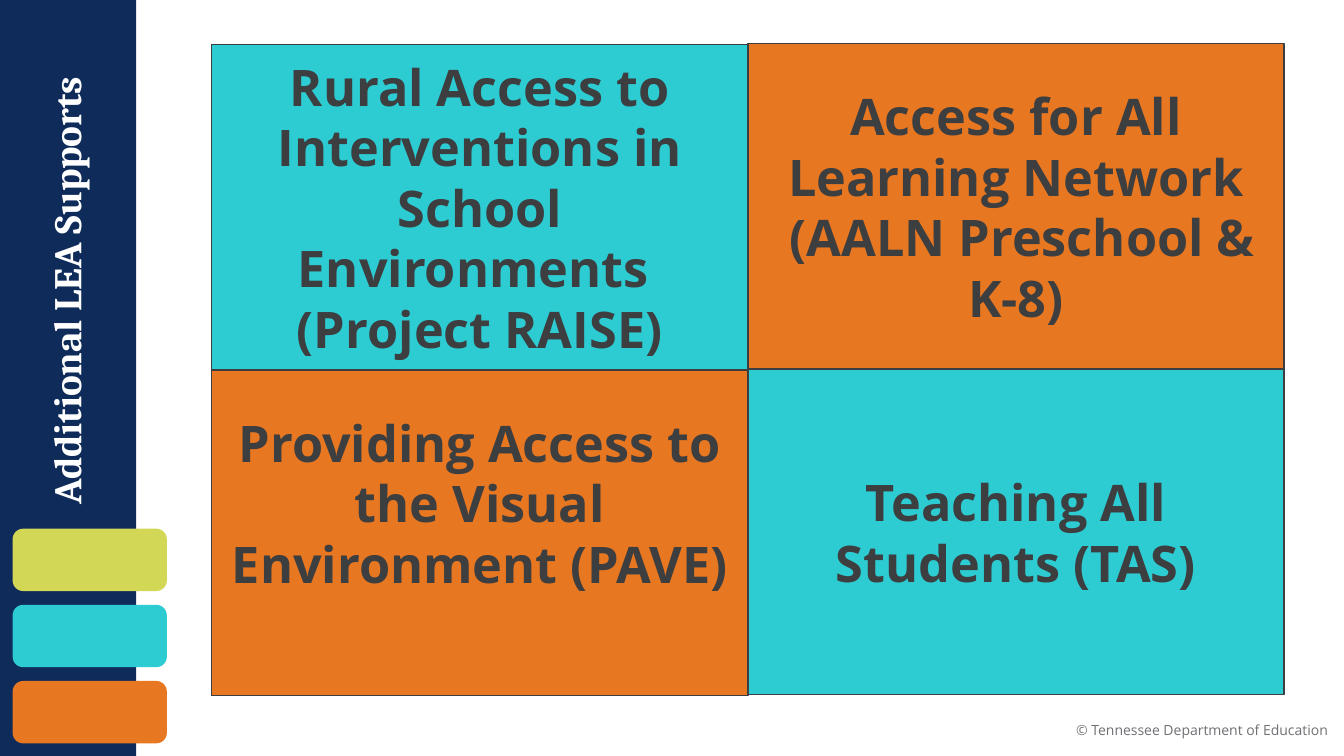
from pptx import Presentation
from pptx import util as u
from pptx.dml import color
from pptx.enum import shapes, text

NAVY, TEAL, ORANGE, LIME = "0E2B5A", "2DCCD3", "E87722", "D2D755"
DARK, GREY, WHITE = "3C3E40", "6E7073", "FFFFFF"


def paint(target, code):
    """Set a fill or font to a hex colour."""
    if hasattr(target, "solid"):
        target.solid()
        target = target.fore_color
    else:
        target = target.color
    target.rgb = color.RGBColor.from_string(code)


class Sheet:
    """Draw styled elements on one slide, with lengths in points."""

    def __init__(self, deck):
        self.slide = deck.slides.add_slide(deck.slide_layouts[5])
        self.body, self.head = "Open Sans", "Cambria"

    def letter(self, frame, lines, size, code, align, font, bold=False, gap=None):
        """Fill a text frame with one run per line."""
        frame.word_wrap = True
        frame.auto_size = text.MSO_AUTO_SIZE.NONE
        for i, line in enumerate(lines):
            par = frame.paragraphs[0] if i == 0 else frame.add_paragraph()
            par.alignment = align
            par.space_before = u.Pt(0)
            if gap:
                par.line_spacing = gap
            run = par.add_run()
            run.text = line
            run.font.name, run.font.size, run.font.bold = font, u.Pt(size), bold
            paint(run.font, code)

    def block(self, box, fill, kind=shapes.MSO_SHAPE.RECTANGLE, edge=None):
        """Add a flat shape."""
        item = self.slide.shapes.add_shape(kind, *map(u.Pt, box))
        item.shadow.inherit = False
        paint(item.fill, fill)
        if edge:
            paint(item.line.fill, edge)
            item.line.width = u.Pt(1)
        else:
            item.line.fill.background()
        return item

    def tile(self, box, fill, lines, lift):
        """Add an outlined tile with centred bold text."""
        frame = self.block(box, fill, edge=DARK).text_frame
        frame.vertical_anchor = text.MSO_ANCHOR.MIDDLE
        frame.margin_bottom = u.Pt(3.6 + lift)
        self.letter(frame, lines, 36, DARK, text.PP_ALIGN.CENTER, self.body, True)

    def title(self, box, line):
        """Turn the title upright and bring it to the front."""
        item = self.slide.shapes.title
        item.left, item.top, item.width, item.height = map(u.Pt, box)
        item.rotation = 270
        item.text_frame.vertical_anchor = text.MSO_ANCHOR.MIDDLE
        self.letter(item.text_frame, [line], 28, WHITE, text.PP_ALIGN.LEFT,
                    self.head, True, 0.9)
        self.slide.shapes._spTree.append(item._element)

    def note(self, box, line):
        """Add a small right-aligned line."""
        item = self.slide.shapes.add_textbox(*map(u.Pt, box))
        self.letter(item.text_frame, [line], 10, GREY, text.PP_ALIGN.RIGHT,
                    self.body, gap=0.9)


def main():
    """Build and save the slide."""
    deck = Presentation()
    deck.slide_width, deck.slide_height = u.Pt(960), u.Pt(540)
    sheet = Sheet(deck)
    sheet.note((553.7, 513.4, 401.8, 18.7), "© Tennessee Department of Education")
    sheet.block((0, 0, 97.2, 540), NAVY)
    for i, fill in enumerate((LIME, TEAL, ORANGE)):
        pill = sheet.block((9, 377.6 + 54.4 * i, 110.2, 44.6), fill,
                           shapes.MSO_SHAPE.ROUNDED_RECTANGLE)
        pill.adjustments[0] = 0.17
    sheet.title((-313.9, -20.2, 725.8, 50.4), "Additional LEA Supports")

    wide, high = 383, 232.6
    tiles = [
        (0, 0, TEAL, ["Rural Access to Interventions in School Environments ",
                      "(Project RAISE)"], 0),
        (1, 0, ORANGE, ["Access for All Learning Network",
                        " (AALN Preschool & K-8)"], 0),
        (0, 1, ORANGE, ["Providing Access to the Visual Environment (PAVE)"], 43.2),
        (1, 1, TEAL, ["Teaching All Students (TAS)"], 0),
    ]
    for col, row, fill, lines, lift in tiles:
        box = (151.2 + wide * col, 31.7 - 0.7 * col + high * row, wide, high)
        sheet.tile(box, fill, lines, lift)
    deck.save("out.pptx")


if __name__ == "__main__":
    main()
